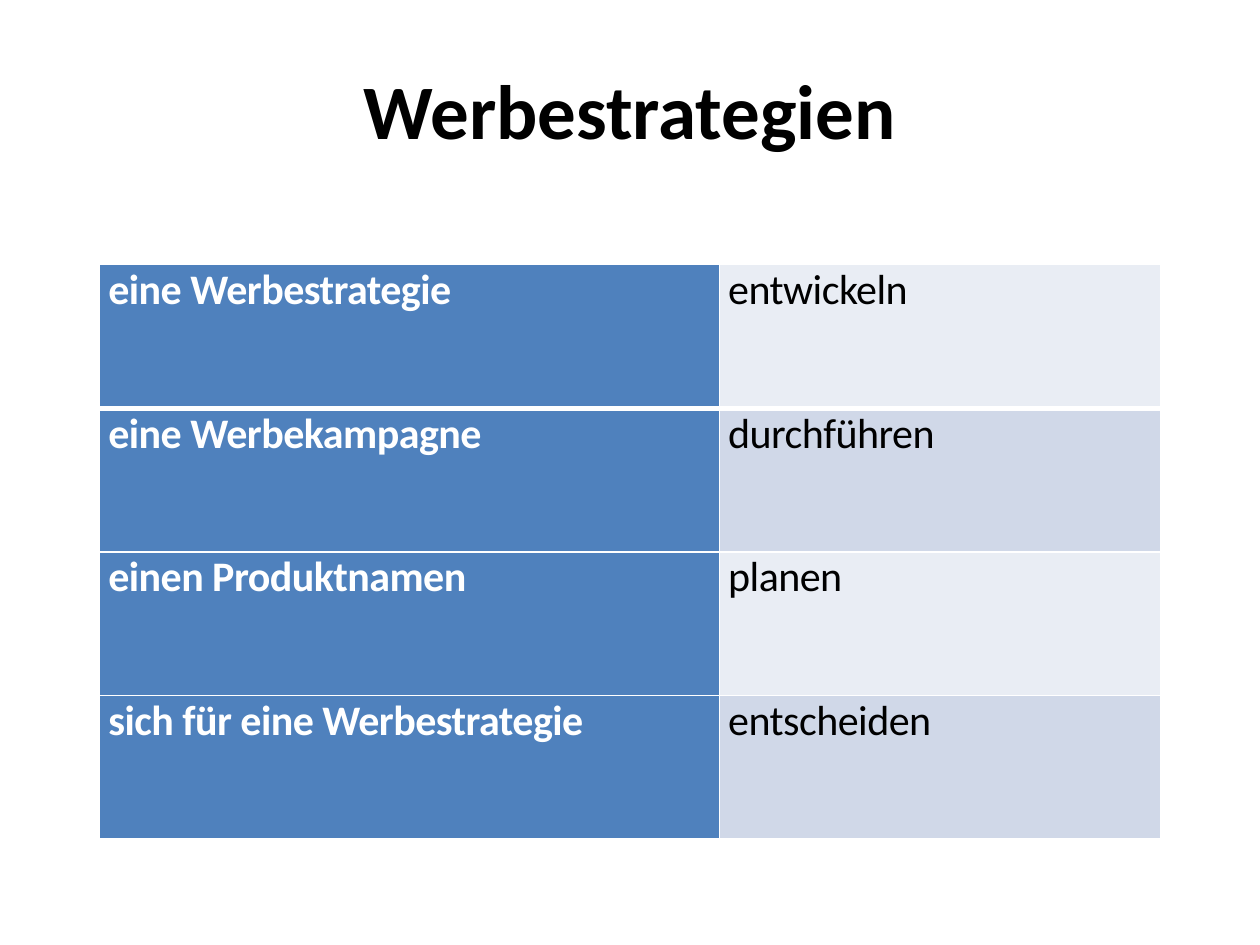
from lxml import etree
from pptx import Presentation
from pptx import util as u
from pptx.dml.color import RGBColor
from pptx.enum import text
from pptx.oxml import ns

WIDTH, HEIGHT = u.Inches(10), u.Inches(7.5)
FONT = "Calibri"
BLACK, WHITE, BLUE = "000000", "FFFFFF", "4F81BD"
BANDS = ("E9EDF4", "D0D8E8")

PHRASES = [
    ("eine Werbestrategie", "entwickeln"),
    ("eine Werbekampagne", "durchführen"),
    ("einen Produktnamen", "planen "),
    ("sich für eine Werbestrategie", "entscheiden"),
]


def colour(hex_code):
    return RGBColor.from_string(hex_code)


def add_run(paragraph, wording, size, hex_code, bold):
    run = paragraph.add_run()
    run.text = wording
    run.font.name = FONT
    run.font.size = u.Pt(size)
    run.font.bold = bold
    run.font.color.rgb = colour(hex_code)
    return run


def add_heading(slide, wording):
    heading = slide.shapes.add_textbox(
        int(WIDTH * 0.05), u.Inches(0.24), int(WIDTH * 0.9), u.Inches(1.25))
    frame = heading.text_frame
    frame.word_wrap = True
    frame.vertical_anchor = text.MSO_ANCHOR.MIDDLE
    paragraph = frame.paragraphs[0]
    paragraph.alignment = text.PP_ALIGN.CENTER
    add_run(paragraph, wording, 44, BLACK, True)


def set_borders(cell, bottom, top):
    """White rules on all sides; they precede the fill in the cell's XML."""
    properties = cell._tc.get_or_add_tcPr()
    sides = (("lnL", 1), ("lnR", 1), ("lnT", top), ("lnB", bottom))
    for position, (side, width) in enumerate(sides):
        rule = etree.Element(ns.qn(f"a:{side}"), w=str(u.Pt(width)))
        fill = etree.SubElement(rule, ns.qn("a:solidFill"))
        etree.SubElement(fill, ns.qn("a:srgbClr"), val=WHITE)
        properties.insert(position, rule)


def fill_cell(cell, wording, background, hex_code, bold, alignment):
    cell.margin_left = cell.margin_right = u.Inches(0.07)
    cell.margin_top = cell.margin_bottom = 0
    cell.fill.solid()
    cell.fill.fore_color.rgb = colour(background)
    paragraph = cell.text_frame.paragraphs[0]
    paragraph.alignment = alignment
    run = add_run(paragraph, wording, 24, hex_code, bold)
    run.font._element.set("spc", "-30")  # slightly tightened letters


def add_phrase_table(slide, phrases):
    noun_width, verb_width, row_height = map(u.Inches, (4.92, 3.5, 1.14))
    table = slide.shapes.add_table(
        len(phrases), 2, u.Inches(0.79), u.Inches(2.1),
        noun_width + verb_width, row_height * len(phrases)).table
    table.columns[0].width, table.columns[1].width = noun_width, verb_width

    last = len(phrases) - 1
    for index, (noun, verb) in enumerate(phrases):
        table.rows[index].height = row_height
        noun_cell, verb_cell = table.cell(index, 0), table.cell(index, 1)
        justified = text.PP_ALIGN.JUSTIFY
        noun_alignment = text.PP_ALIGN.LEFT if index == last else justified
        fill_cell(noun_cell, noun, BLUE, WHITE, True, noun_alignment)
        fill_cell(verb_cell, verb, BANDS[index % 2], BLACK, False, justified)
        # A thicker rule separates the first row from the rest
        for cell in (noun_cell, verb_cell):
            set_borders(cell, bottom=3 if index == 0 else 1,
                        top=3 if index == 1 else 1)


def main():
    deck = Presentation()
    deck.slide_width, deck.slide_height = WIDTH, HEIGHT
    slide = deck.slides.add_slide(deck.slide_layouts[6])
    slide.background.fill.solid()
    slide.background.fill.fore_color.rgb = colour(WHITE)

    # Heading
    add_heading(slide, "Werbestrategien")
    # Nouns with their matching verbs
    add_phrase_table(slide, PHRASES)

    deck.save("out.pptx")


if __name__ == "__main__":
    main()
